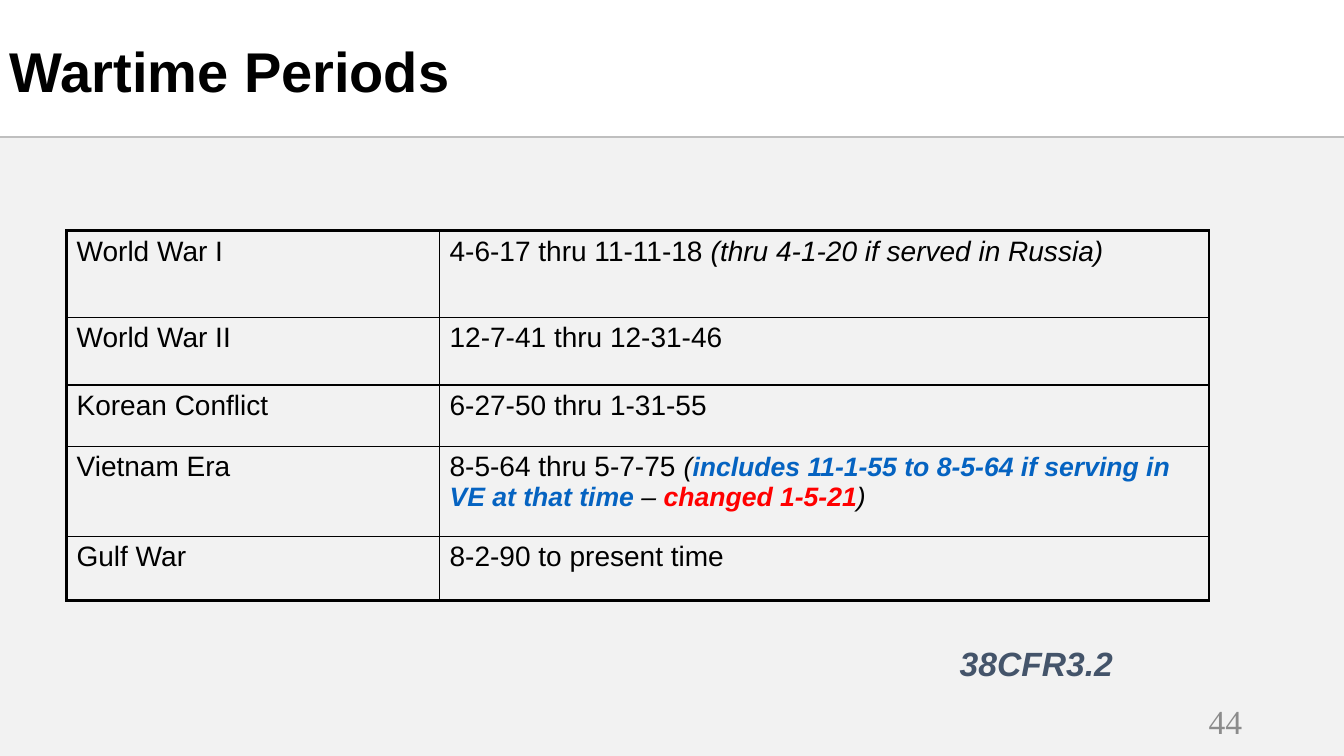
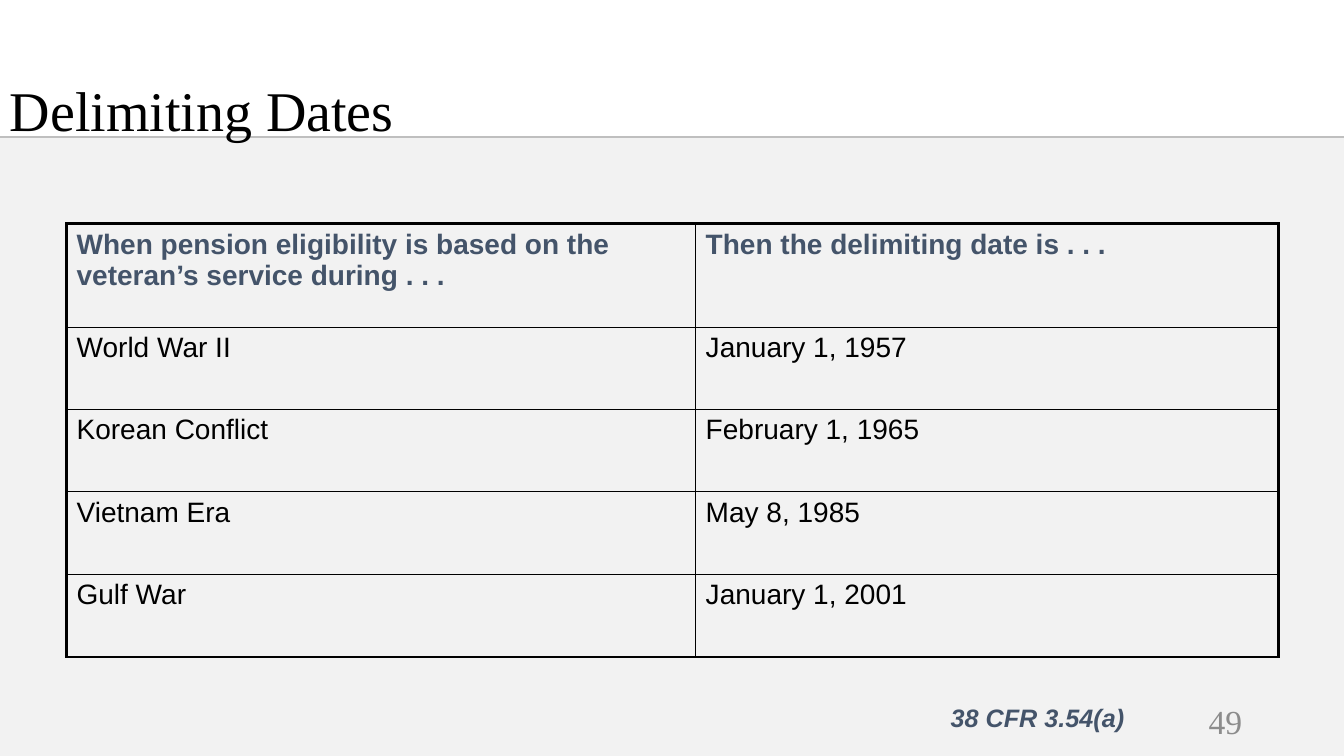
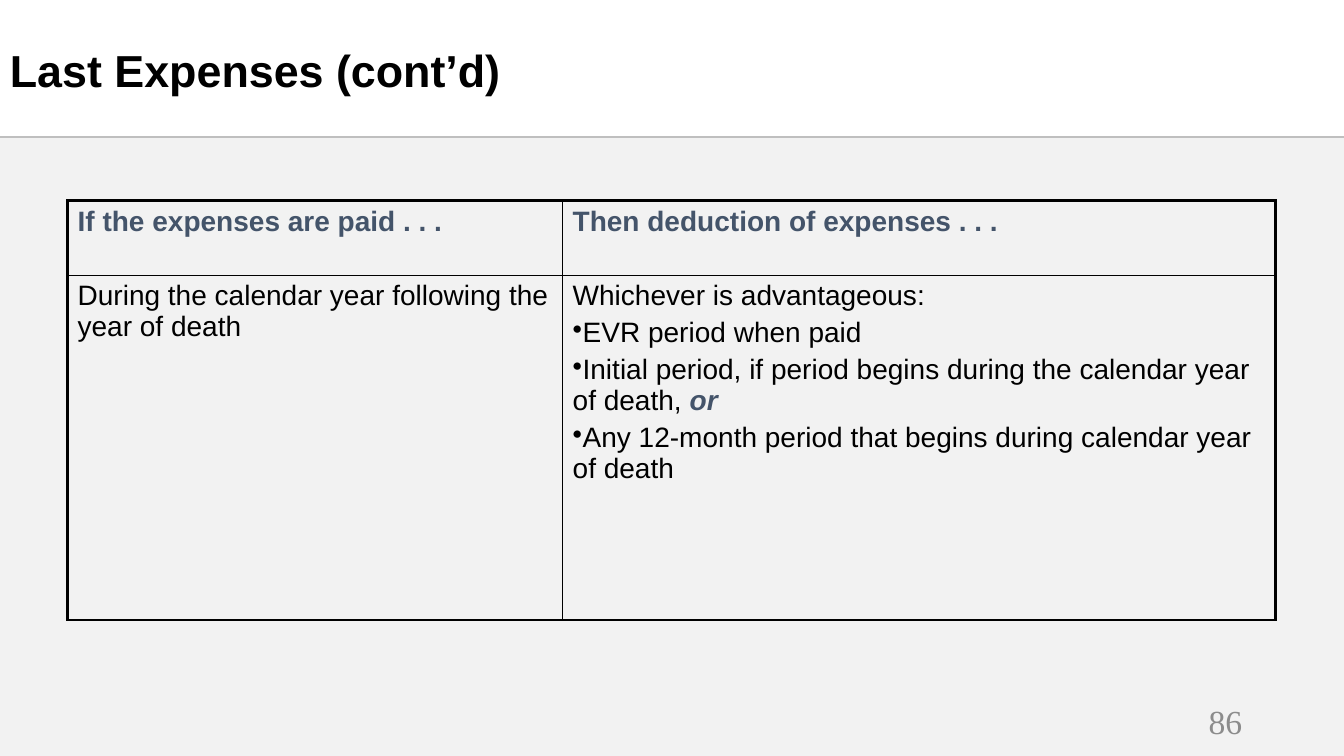
from dataclasses import dataclass
from typing import Optional

from lxml.etree import SubElement
from pptx import Presentation
from pptx.dml.color import RGBColor
from pptx.enum.shapes import MSO_CONNECTOR, MSO_SHAPE
from pptx.enum.text import MSO_ANCHOR, MSO_AUTO_SIZE, PP_ALIGN
from pptx.oxml.ns import qn
from pptx.util import Inches, Pt

COLORS = {
    "black": "000000",
    "slate": "44546A",
    "blue": "0563C1",
    "red": "FF0000",
    "panel": "F2F2F2",
    "rule": "BFBFBF",
    "number": "8C8C8C",
}
SANS = "Arial"
SERIF = "Times New Roman"
SLIDE_WIDTH, SLIDE_HEIGHT = 13.33, 7.5
PANEL_TOP, RULE_TOP = 1.37, 1.36
OUTER_BORDER, INNER_BORDER = 2.25, 1


@dataclass(frozen=True)
class Span:
    text: str
    size: float = 20
    color: str = "black"
    bold: bool = False
    italic: bool = False
    font: str = SANS


@dataclass(frozen=True)
class Line:
    spans: tuple[Span, ...]
    bullet: bool = False


@dataclass(frozen=True)
class Box:
    left: float
    top: float
    width: float
    height: float


@dataclass(frozen=True)
class Citation:
    box: Box
    span: Span
    align: PP_ALIGN


@dataclass(frozen=True)
class Grid:
    left: float
    top: float
    columns: tuple[float, ...]
    heights: tuple[float, ...]
    rows: tuple[tuple[tuple[Line, ...], ...], ...]


@dataclass(frozen=True)
class Page:
    number: int
    title: Span
    title_top: float
    grid: Grid
    citation: Optional[Citation] = None


def plain(text: str) -> tuple[Line, ...]:
    return (Line((Span(text),)),)


def heading(text: str) -> tuple[Line, ...]:
    return (Line((Span(text, color="slate", bold=True),)),)


def reference(text: str, size: float) -> Span:
    return Span(text, size, "slate", bold=True, italic=True)


def rgb(name: str) -> RGBColor:
    return RGBColor.from_string(COLORS[name])


def add_span(paragraph, span: Span) -> None:
    run = paragraph.add_run()
    run.text = span.text
    run.font.name = span.font
    run.font.size = Pt(span.size)
    run.font.bold = span.bold
    run.font.italic = span.italic
    run.font.color.rgb = rgb(span.color)


def add_text(slide, box: Box, span: Span, align=PP_ALIGN.LEFT,
             anchor=MSO_ANCHOR.MIDDLE, spacing: float = 1, fit: bool = False) -> None:
    frame = slide.shapes.add_textbox(
        Inches(box.left), Inches(box.top), Inches(box.width), Inches(box.height)
    ).text_frame
    frame.word_wrap = not fit
    frame.auto_size = MSO_AUTO_SIZE.SHAPE_TO_FIT_TEXT if fit else MSO_AUTO_SIZE.NONE
    frame.vertical_anchor = anchor
    paragraph = frame.paragraphs[0]
    paragraph.alignment = align
    paragraph.line_spacing = spacing
    add_span(paragraph, span)


def add_frame(slide, page: Page) -> None:
    panel = slide.shapes.add_shape(
        MSO_SHAPE.RECTANGLE, 0, Inches(PANEL_TOP),
        Inches(SLIDE_WIDTH), Inches(SLIDE_HEIGHT - PANEL_TOP),
    )
    panel.shadow.inherit = False
    panel.fill.solid()
    panel.fill.fore_color.rgb = rgb("panel")
    panel.line.fill.background()
    rule = slide.shapes.add_connector(
        MSO_CONNECTOR.STRAIGHT, 0, Inches(RULE_TOP), Inches(SLIDE_WIDTH), Inches(RULE_TOP)
    )
    rule.line.color.rgb = rgb("rule")
    rule.line.width = Pt(1.5)
    SubElement(rule._element.spPr, qn("a:effectLst"))
    add_text(slide, Box(9.42, 6.95, 3, 0.4),
             Span(str(page.number), 24, "number", font=SERIF), PP_ALIGN.RIGHT)
    add_text(slide, Box(0, page.title_top, 11.5, 1.45), page.title, spacing=0.9)


def set_borders(cell, widths: dict[str, float]) -> None:
    properties = cell._tc.get_or_add_tcPr()
    for side, width in widths.items():
        border = SubElement(properties, qn(f"a:ln{side}"), w=str(Pt(width)))
        fill = SubElement(border, qn("a:solidFill"))
        SubElement(fill, qn("a:srgbClr"), val=COLORS["black"])


def fill_cell(cell, lines: tuple[Line, ...]) -> None:
    frame = cell.text_frame
    for index, line in enumerate(lines):
        paragraph = frame.add_paragraph() if index else frame.paragraphs[0]
        if line.bullet:
            properties = paragraph._p.get_or_add_pPr()
            properties.set("marL", "0")
            properties.set("indent", "0")
            SubElement(properties, qn("a:buChar"), char="•")
        if index:
            paragraph.space_before = Pt(4)
        for span in line.spans:
            add_span(paragraph, span)


def add_grid(slide, grid: Grid) -> None:
    last_row, last_column = len(grid.heights) - 1, len(grid.columns) - 1
    table = slide.shapes.add_table(
        last_row + 1, last_column + 1, Inches(grid.left), Inches(grid.top),
        Inches(sum(grid.columns)), Inches(sum(grid.heights)),
    ).table
    table.first_row = False
    table.horz_banding = False
    for column, width in zip(table.columns, grid.columns):
        column.width = Inches(width)
    for row, height in zip(table.rows, grid.heights):
        row.height = Inches(height)
    for r, row_content in enumerate(grid.rows):
        for c, lines in enumerate(row_content):
            cell = table.cell(r, c)
            outer = {"L": c == 0, "R": c == last_column, "T": r == 0, "B": r == last_row}
            set_borders(cell, {side: OUTER_BORDER if edge else INNER_BORDER
                               for side, edge in outer.items()})
            cell.fill.background()
            fill_cell(cell, lines)


PAGES = (
    Page(
        44, Span("Wartime Periods", 40, bold=True), 0.01,
        Grid(0.66, 2.29, (3.7, 7.63), (0.86, 0.67, 0.61, 0.89, 0.64), (
            (plain("World War I"), (Line((
                Span("4-6-17 thru 11-11-18 "),
                Span("(thru 4-1-20 if served in Russia)", italic=True),
            )),)),
            (plain("World War II"), plain("12-7-41 thru 12-31-46")),
            (plain("Korean Conflict"), plain("6-27-50 thru 1-31-55")),
            (plain("Vietnam Era"), (Line((
                Span("8-5-64 thru 5-7-75 "),
                Span("(", 19, italic=True),
                Span("includes 11-1-55 to 8-5-64 if serving in VE at that time",
                     19, "blue", bold=True, italic=True),
                Span(" – ", 19, italic=True),
                Span("changed 1-5-21", 19, "red", bold=True, italic=True),
                Span(")", 19, italic=True),
            )),)),
            (plain("Gulf War"), plain("8-2-90 to present time")),
        )),
        Citation(Box(9.42, 6.33, 1.74, 0.5), reference("38CFR3.2", 24), PP_ALIGN.LEFT),
    ),
    Page(
        49, Span("Delimiting Dates", 40, font=SERIF), 0.4,
        Grid(0.66, 2.22, (6.24, 5.78), (1.03, 0.81, 0.82, 0.82, 0.82), (
            (heading("When pension eligibility is based on the veteran’s service during . . ."),
             heading("Then the delimiting date is . . .")),
            (plain("World War II"), plain("January 1, 1957")),
            (plain("Korean Conflict"), plain("February 1, 1965")),
            (plain("Vietnam Era"), plain("May 8, 1985")),
            (plain("Gulf War"), plain("January 1, 2001")),
        )),
        Citation(Box(9.33, 6.92, 1.92, 0.4), reference("38 CFR 3.54(a)", 18), PP_ALIGN.RIGHT),
    ),
    Page(
        86, Span("Last Expenses (cont’d)", 32, bold=True), 0,
        Grid(0.67, 1.99, (4.91, 7.07), (0.74, 3.42), (
            (heading("If the expenses are paid . . ."),
             heading("Then deduction of expenses . . .")),
            (plain("During the calendar year following the year of death"), (
                Line((Span("Whichever is advantageous:"),)),
                Line((Span("EVR period when paid"),), bullet=True),
                Line((
                    Span("Initial period, if period begins during the calendar year of death, "),
                    reference("or", 20),
                ), bullet=True),
                Line((Span("Any 12-month period that begins during calendar year of death"),),
                     bullet=True),
            )),
        )),
    ),
)


def main() -> None:
    deck = Presentation()
    deck.slide_width = Inches(SLIDE_WIDTH)
    deck.slide_height = Inches(SLIDE_HEIGHT)
    for page in PAGES:
        slide = deck.slides.add_slide(deck.slide_layouts[6])
        add_frame(slide, page)
        add_grid(slide, page.grid)
        if page.citation:
            add_text(slide, page.citation.box, page.citation.span, page.citation.align,
                     MSO_ANCHOR.TOP, fit=True)
    deck.save("out.pptx")


if __name__ == "__main__":
    main()
